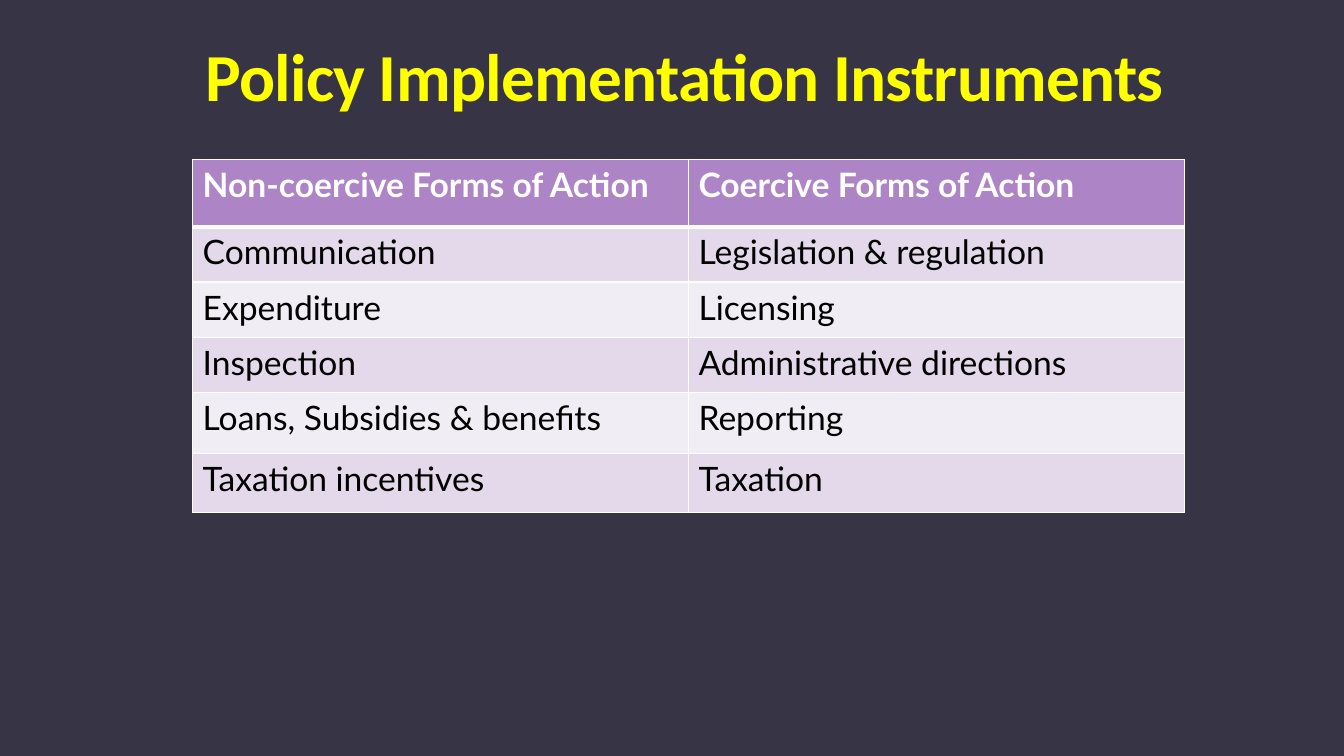
"""Build the slide that lists policy implementation instruments."""
from lxml import etree
from pptx import Presentation
from pptx.dml.color import RGBColor
from pptx.enum.text import MSO_ANCHOR, PP_ALIGN
from pptx.oxml.ns import qn
from pptx.util import Pt

BOTTOM = MSO_ANCHOR.BOTTOM
CENTER = PP_ALIGN.CENTER

TITLE = "Policy Implementation Instruments"
INSTRUMENTS = [
    ("Non-coercive Forms of Action", "Coercive Forms of Action"),
    ("Communication", "Legislation & regulation"),
    ("Expenditure", "Licensing"),
    ("Inspection", "Administrative directions"),
    ("Loans, Subsidies & benefits", "Reporting"),
    ("Taxation incentives", "Taxation"),
]

THEME = {
    "background": "373545",
    "title": "FFFF00",
    "header_fill": "AD84C6",
    "header_text": "FFFFFF",
    "bands": ("F1EDF5", "E3D9EA"),
    "body_text": "000000",
    "border": "FFFFFF",
    "title_font": "Calibri",
    "table_font": "Lato",
    "title_size": 48,
    "table_size": 24,
}

PAGE_SIZE = (960, 540)
TITLE_BOX = (59.76, 12.24, 858.24, 73.44)
TABLE_LEFT, TABLE_TOP = 137.6, 113.8
COLUMN_WIDTH = 354.2
ROW_HEIGHTS = (48.2, 39.5, 39.5, 39.5, 43.6, 42)
THIN, THICK = 1, 3


def add_span(para, text, font, size, color, bold):
    span = para.add_run()
    span.text = text
    span.font.name = font
    span.font.size = Pt(size)
    span.font.bold = bold
    span.font.color.rgb = RGBColor.from_string(color)
    return span


def add_border(cell, side, width):
    properties = cell._tc.get_or_add_tcPr()
    line = etree.SubElement(properties, qn(f"a:ln{side}"), w=str(Pt(width)))
    fill = etree.SubElement(line, qn("a:solidFill"))
    etree.SubElement(fill, qn("a:srgbClr"), val=THEME["border"])


def add_title(page):
    box = page.shapes.add_textbox(*map(Pt, TITLE_BOX))
    frame = box.text_frame
    frame.word_wrap = True
    frame.vertical_anchor = BOTTOM
    para = frame.paragraphs[0]
    para.alignment = CENTER
    para.line_spacing = 0.85
    span = add_span(para, TITLE, THEME["title_font"], THEME["title_size"],
                    THEME["title"], True)
    span.font._element.set("spc", "-50")


def fill_cell(cell, text, row):
    header = row == 0
    widths = {"L": THIN, "R": THIN,
              "T": THICK if row == 1 else THIN,
              "B": THICK if header else THIN}
    for side, width in widths.items():
        add_border(cell, side, width)
    color = THEME["header_fill"] if header else THEME["bands"][row % 2]
    cell.fill.solid()
    cell.fill.fore_color.rgb = RGBColor.from_string(color)
    ink = THEME["header_text"] if header else THEME["body_text"]
    add_span(cell.text_frame.paragraphs[0], text, THEME["table_font"],
             THEME["table_size"], ink, header)


def add_instruments(page):
    columns = len(INSTRUMENTS[0])
    frame = page.shapes.add_table(
        len(INSTRUMENTS), columns, Pt(TABLE_LEFT), Pt(TABLE_TOP),
        Pt(columns * COLUMN_WIDTH), Pt(sum(ROW_HEIGHTS)))
    table = frame.table
    for column in table.columns:
        column.width = Pt(COLUMN_WIDTH)
    for row, (texts, height) in enumerate(zip(INSTRUMENTS, ROW_HEIGHTS)):
        table.rows[row].height = Pt(height)
        for column, text in enumerate(texts):
            fill_cell(table.cell(row, column), text, row)


def main():
    deck = Presentation()
    deck.slide_width, deck.slide_height = map(Pt, PAGE_SIZE)
    page = deck.slides.add_slide(deck.slide_layouts[6])
    page.background.fill.solid()
    page.background.fill.fore_color.rgb = RGBColor.from_string(THEME["background"])
    add_title(page)
    add_instruments(page)
    deck.save("out.pptx")


if __name__ == "__main__":
    main()
